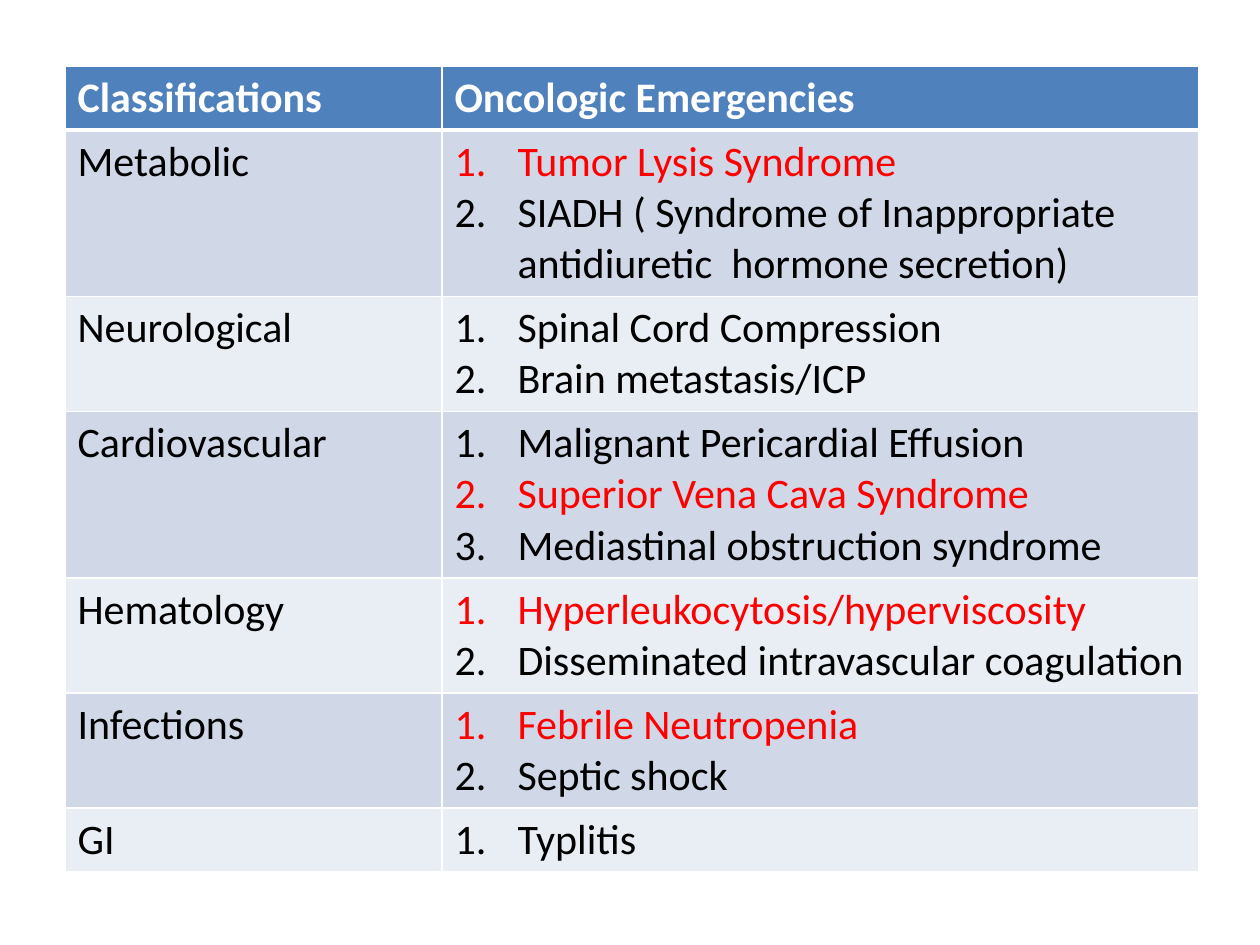
from lxml.etree import SubElement
from pptx import Presentation
from pptx.dml.color import RGBColor
from pptx.oxml.ns import qn
from pptx.util import Emu, Pt

PX_PER_INCH = 126
WHITE = RGBColor(0xFF, 0xFF, 0xFF)
BLACK = RGBColor(0x00, 0x00, 0x00)
RED = RGBColor(0xFF, 0x00, 0x00)
HEADER_BLUE = RGBColor(0x4F, 0x81, 0xBD)
BANDS = (RGBColor(0xD0, 0xD8, 0xE8), RGBColor(0xE9, 0xED, 0xF4))

HEADINGS = ("Classifications", "Oncologic Emergencies")
EMERGENCIES = [
    ("Metabolic", 3, ["Tumor Lysis Syndrome",
                      "SIADH ( Syndrome of Inappropriate antidiuretic  hormone secretion)"]),
    ("Neurological", 2, ["Spinal Cord Compression", "Brain metastasis/ICP"]),
    ("Cardiovascular", 3, ["Malignant Pericardial Effusion", "Superior Vena Cava Syndrome",
                           "Mediastinal obstruction syndrome"]),
    ("Hematology", 2, ["Hyperleukocytosis/hyperviscosity",
                       "Disseminated intravascular coagulation"]),
    ("Infections", 2, ["Febrile Neutropenia", "Septic shock"]),
    ("GI", 1, ["Typlitis"]),
]
HIGHLIGHTED = {"Tumor Lysis Syndrome", "Superior Vena Cava Syndrome",
               "Hyperleukocytosis/hyperviscosity", "Febrile Neutropenia"}
LINE_HEIGHT = 51
ROW_PADDING = 13
NUMBER_INDENT = 63


def px(length):
    return Emu(round(length * 914400 / PX_PER_INCH))


def write_text(paragraph, text, color=BLACK, bold=False, numbered=False):
    run = paragraph.add_run()
    run.text = text
    run.font.name = "Calibri"
    run.font.size = Pt(24)
    run.font.bold = bold
    run.font.color.rgb = color
    if numbered:
        properties = paragraph._p.get_or_add_pPr()
        properties.set("marL", str(px(NUMBER_INDENT)))
        properties.set("indent", str(-px(NUMBER_INDENT)))
        SubElement(properties, qn("a:buFont"), typeface="+mj-lt")
        SubElement(properties, qn("a:buAutoNum"), type="arabicPeriod")


class SlideBuilder:
    def __init__(self, presentation):
        self.slide = presentation.slides.add_slide(presentation.slide_layouts[6])

    def table(self, left, top, widths, heights):
        table = self.slide.shapes.add_table(
            len(heights), len(widths), px(left), px(top), px(sum(widths)), px(sum(heights))
        ).table
        for column, width in zip(table.columns, widths):
            column.width = px(width)
        for row, height in zip(table.rows, heights):
            row.height = px(height)
        return table

    def borders(self, cell, bottom=1, top=1):
        properties = cell._tc.get_or_add_tcPr()
        for side, points in (("L", 1), ("R", 1), ("T", top), ("B", bottom)):
            line = SubElement(properties, qn(f"a:ln{side}"), w=str(Pt(points)))
            fill = SubElement(line, qn("a:solidFill"))
            SubElement(fill, qn("a:srgbClr"), val=str(WHITE))

    def cell(self, cell, texts, fill, bottom=1, top=1, **text_format):
        self.borders(cell, bottom, top)
        cell.fill.solid()
        cell.fill.fore_color.rgb = fill
        frame = cell.text_frame
        for index, text in enumerate(texts):
            paragraph = frame.add_paragraph() if index else frame.paragraphs[0]
            color = RED if text in HIGHLIGHTED else BLACK
            write_text(paragraph, text, **{"color": color, **text_format})


def main():
    presentation = Presentation()
    presentation.slide_width = px(1260)
    presentation.slide_height = px(945)
    builder = SlideBuilder(presentation)

    line_counts = [1] + [lines for _, lines, _ in EMERGENCIES]
    heights = [ROW_PADDING + LINE_HEIGHT * lines for lines in line_counts]
    table = builder.table(65, 66, (377, 757), heights)

    for column, heading in enumerate(HEADINGS):
        builder.cell(table.cell(0, column), [heading], HEADER_BLUE, bottom=3,
                     color=WHITE, bold=True)
    for row, (category, _, conditions) in enumerate(EMERGENCIES, start=1):
        band = BANDS[(row - 1) % 2]
        top = 3 if row == 1 else 1
        builder.cell(table.cell(row, 0), [category], band, top=top)
        builder.cell(table.cell(row, 1), conditions, band, top=top, numbered=True)

    presentation.save("out.pptx")


if __name__ == "__main__":
    main()
